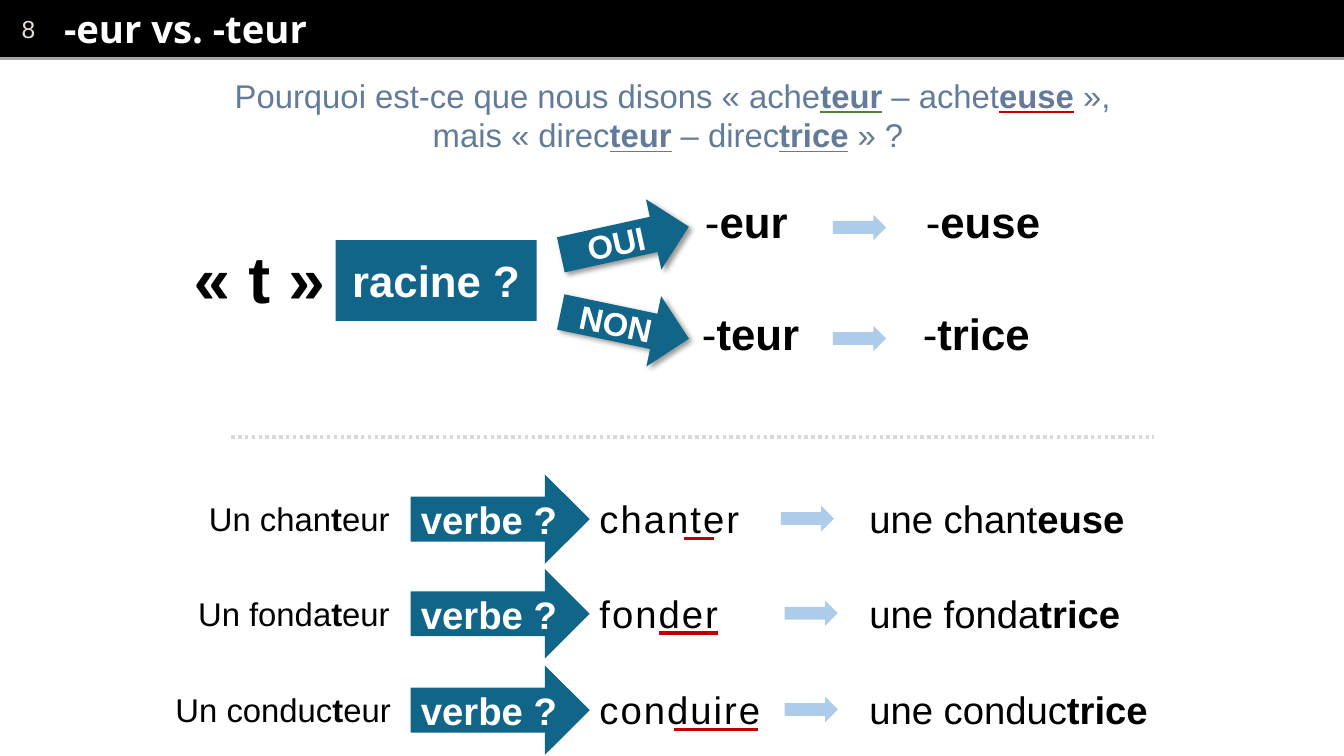
from dataclasses import dataclass

from lxml.etree import SubElement
from pptx import Presentation
from pptx.dml.color import RGBColor as Rgb
from pptx.enum.dml import MSO_LINE_DASH_STYLE as Dash
from pptx.enum.shapes import MSO_CONNECTOR_TYPE as Link, MSO_SHAPE as Form
from pptx.enum.text import MSO_ANCHOR as Anchor, PP_ALIGN as Align
from pptx.oxml.ns import qn
from pptx.util import Pt


@dataclass(frozen=True)
class Theme:
    """Colours, fonts and type sizes of the slide."""
    black: str = "000000"
    white: str = "FFFFFF"
    teal: str = "106588"
    sky: str = "5B9BD5"
    slate: str = "627B9A"
    sand: str = "E7DED1"
    red: str = "C00000"
    green: str = "548235"
    grey: str = "A6A6A6"
    pale: str = "D9D9D9"
    body: str = "Arial"
    head: str = "Open Sans"
    number: int = 18
    small: int = 24
    medium: int = 28
    large: int = 32
    huge: int = 48


class Board:
    """Draws the kinds of element used on one page."""

    def __init__(self, page, theme):
        """Keep the page and its style."""
        self.shapes = page.shapes
        self.theme = theme

    def fill_text(self, box, text, size, color, font=None, bold=False, align=Align.LEFT,
                  anchor=Anchor.TOP, wrap=True, left=7.2, spacing=0, underlines=()):
        """Fill a box with text whose starred parts are bold."""
        frame = box.text_frame
        layout = {"word_wrap": wrap, "vertical_anchor": anchor, "margin_left": Pt(left)}
        for name, value in layout.items():
            setattr(frame, name, value)
        para = frame.paragraphs[0]
        para.alignment = align
        colors = iter(underlines)
        for index, part in enumerate(text.split("*")):
            if not part:
                continue
            starred = index % 2 == 1
            span = para.add_run()
            span.text = part
            span.font.color.rgb = Rgb.from_string(color)
            look = {"name": font or self.theme.body, "size": Pt(size),
                    "bold": bold or starred, "underline": bool(underlines) and starred}
            for name, value in look.items():
                setattr(span.font, name, value)
            props = span.font._element
            if spacing:
                props.set("spc", str(int(spacing * 100)))
            if underlines and starred:
                rule = SubElement(props, qn("a:uFill"))
                fill = SubElement(rule, qn("a:solidFill"))
                SubElement(fill, qn("a:srgbClr"), val=next(colors))
                props.find(qn("a:solidFill")).addnext(rule)
        return para

    def text(self, place, text, size, color=None, tab=0, **style):
        """Add a text box, with a tab stop if one is given."""
        box = self.shapes.add_textbox(*map(Pt, place))
        para = self.fill_text(box, text, size, color or self.theme.black, **style)
        if tab:
            stops = SubElement(para._p.get_or_add_pPr(), qn("a:tabLst"))
            SubElement(stops, qn("a:tab"), pos=str(Pt(tab)), algn="l")

    def shape(self, form, place, color, opacity=100, turn=0, shadow=False):
        """Add a filled shape without outline."""
        shape = self.shapes.add_shape(form, *map(Pt, place))
        shape.rotation = turn
        shape.shadow.inherit = False
        shape.fill.solid()
        shape.fill.fore_color.rgb = Rgb.from_string(color)
        shape.line.fill.background()
        props = shape._element.spPr
        if opacity < 100:
            tint = props.find(qn("a:solidFill"))[0]
            SubElement(tint, qn("a:alpha"), val=str(opacity * 1000))
        if shadow:
            cast = SubElement(props.find(qn("a:effectLst")), qn("a:outerShdw"),
                              blurRad=str(Pt(4)), dist=str(Pt(3)), dir="2700000")
            shade = SubElement(cast, qn("a:srgbClr"), val=self.theme.black)
            SubElement(shade, qn("a:alpha"), val="40000")
        return shape

    def label(self, form, place, text, size, **style):
        """Add a teal shape with a bold white label."""
        shape = self.shape(form, place, self.theme.teal, **style)
        self.fill_text(shape, text, size, self.theme.white, bold=True,
                       align=Align.CENTER, anchor=Anchor.MIDDLE)

    def pointer(self, left, top):
        """Add a small pale arrow."""
        self.shape(Form.RIGHT_ARROW, (left, top, 38.9, 18.7), self.theme.sky, opacity=50)

    def line(self, start, end, height, color, width, dash=None):
        """Add a horizontal line."""
        line = self.shapes.add_connector(Link.STRAIGHT, *map(Pt, (start, height, end, height)))
        line.line.color.rgb = Rgb.from_string(color)
        for name, value in {"width": Pt(width), "dash_style": dash}.items():
            setattr(line.line, name, value)
        SubElement(line._element.spPr, qn("a:effectLst"))


def draw_header(board, theme):
    """Draw the title bar."""
    bar = board.shape(Form.RECTANGLE, (0, 0, 982.8, 41.8), theme.black)
    board.fill_text(bar, "8", theme.number, theme.sand, anchor=Anchor.MIDDLE, left=15.8)
    board.line(0, 982.8, 43, theme.grey, 2)
    board.text((43.9, 0.7, 925.2, 40.3), "-eur vs. -teur", theme.medium, theme.white,
               font=theme.head, bold=True, anchor=Anchor.MIDDLE, left=2.9)


def draw_rule(board, theme):
    """Draw the question and the decision it leads to."""
    board.text((154.1, 51.8, 675.4, 65.5),
               "Pourquoi est-ce que nous disons « ache*teur* – achet*euse* », "
               "mais « direc*teur* – direc*trice* » ? ",
               theme.small, theme.slate, align=Align.CENTER,
               underlines=(theme.green, theme.red, theme.slate, theme.slate))
    board.text((134.6, 170.6, 110.9, 65.5), "« t »", theme.huge, bold=True)
    board.label(Form.RECTANGLE, (245.5, 175.7, 146.9, 59), "racine ?", theme.large)
    answers = (
        ("OUI", 149.8, -12.4, 508.4, 139, "-*eur*\t-*euse*", 157),
        ("NON", 211.7, 11.8, 506.2, 221, "-*teur*\t-*trice*", 238.3),
    )
    for answer, top, turn, left, text_top, endings, pointer_top in answers:
        board.label(Form.RIGHT_ARROW, (409, top, 95.8, 52.6), answer, theme.small,
                    turn=turn, shadow=True)
        board.text((left, text_top, 300, 46.1), endings, theme.large, tab=161.5)
        board.pointer(609.1, pointer_top)


def draw_examples(board, theme):
    """Draw the three worked examples."""
    board.line(169.2, 843.8, 319.7, theme.pale, 2.5, Dash.ROUND_DOT)
    examples = (
        (347, "Un chan*t*eur", 154.8, "chanter", 119.5, 500.4, 522, 571, "une chant*euse*", 203.8),
        (416.2, "Un fonda*t*eur", 162.7, "fonder", 103.7, 481.7, 524.9, 573.8, "une fonda*trice*", 200.2),
        (486.7, "Un conduc*t*eur", 179.3, "conduire", 135.4, 493.2, 554.4, 573.8, "une conduc*trice*", 221),
    )
    for top, noun, noun_width, verb, verb_width, start, end, pointer, feminine, width in examples:
        board.text((300.5 - noun_width, top + 14.4, noun_width, 36), noun, theme.small, wrap=False)
        board.label(Form.RIGHT_ARROW, (300.2, top, 131, 65.5), "verbe ?", theme.medium)
        board.text((431.3, top + 11.7, verb_width, 41), verb, theme.medium,
                   wrap=False, spacing=1.5)
        board.line(start, end, top + 47, theme.red, 2.5)
        board.pointer(pointer, top + 23)
        board.text((628.6, top + 11.7, width, 41), feminine, theme.medium, wrap=False)


def main():
    """Build the deck and save it."""
    deck = Presentation()
    deck.slide_width, deck.slide_height = Pt(982.8), Pt(553)
    page = deck.slides.add_slide(deck.slide_layouts[6])
    theme = Theme()
    board = Board(page, theme)
    for draw in (draw_header, draw_rule, draw_examples):
        draw(board, theme)
    deck.save("out.pptx")


if __name__ == "__main__":
    main()
